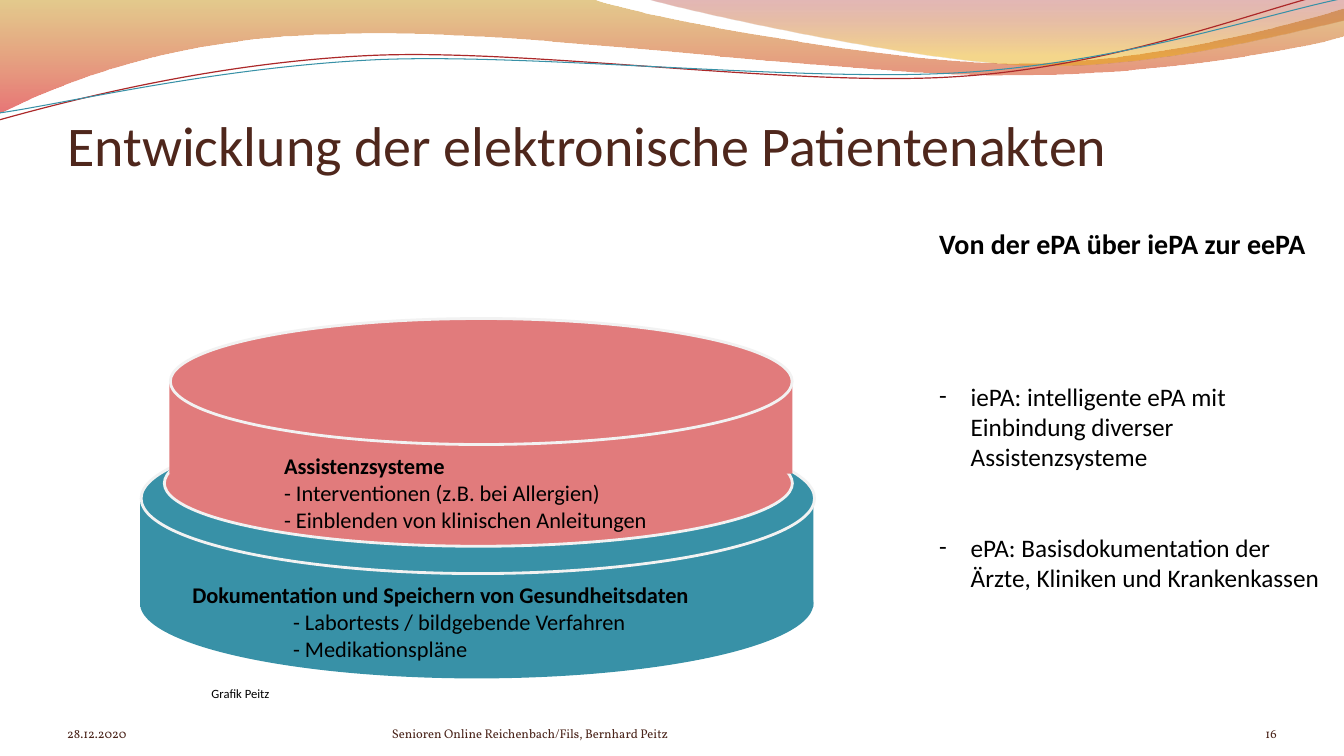
from dataclasses import dataclass
from typing import Optional

from lxml.etree import SubElement
from pptx import Presentation
from pptx.dml.color import RGBColor
from pptx.enum.shapes import MSO_SHAPE as Preset
from pptx.enum.text import MSO_ANCHOR as Anchor, MSO_AUTO_SIZE as AutoSize, PP_ALIGN as Align
from pptx.oxml.ns import qn
from pptx.util import Pt

Box = tuple[float, float, float, float]

TEAL, ROSE, RIM = "3891A7", "E17B7C", "F2F2F2"
BLACK, BROWN, FOOTER_BROWN = "000000", "4F271C", "4B251B"


@dataclass
class Stop:
    position: float
    color: str
    opacity: int


@dataclass
class Wave:
    start: tuple[float, float]
    segments: list[tuple[float, ...]]
    stops: tuple[Stop, ...] = ()
    line: str = ""
    line_width: float = 0


@dataclass
class Disc:
    color: str
    base: Box
    wall: Box
    lid: Box
    rimmed_base: bool


@dataclass
class Line:
    text: str
    size: float
    bold: bool = False
    font: str = "Calibri"
    color: str = BLACK
    before: float = 0
    indent: float = 0
    bullet: str = ""
    align: Align = Align.LEFT


@dataclass
class Label:
    box: Box
    lines: list[Line]
    anchor: Anchor = Anchor.TOP
    insets: Box = (7.2, 3.6, 7.2, 3.6)


WAVES = [
    Wave((0, 0), [
        (422.6, -0.7),
        (456.5, 12.2, 637.2, 45.4, 727.9, 45.4),
        (819.4, 45.4, 920.2, 18.7, 959.8, 6.5),
        (961.2, 25.9),
        (943.9, 31.7, 835.2, 54.7, 715.7, 54),
        (596.9, 54, 366.5, 20.2, 247, 24.5),
        (123.1, 25.9, 43.9, 59.8, -0.7, 81.4),
    ], stops=(Stop(0, "C38B00", 45), Stop(1, "D60305", 55))),
    Wave((460.1, -0.7), [
        (488.9, 7.9, 654.5, 44.6, 738, 46.8),
        (821.5, 49.7, 923, 23, 959.8, 15.1),
        (959.8, 0),
    ], stops=(Stop(0, "A11112", 30), Stop(0.8, "E9A600", 45))),
    Wave((-0.7, 85.7), [
        (46.1, 72.7, 151.9, 44.6, 265.7, 39.6),
        (379.4, 34.6, 568.8, 62.6, 684, 54.7),
        (799.2, 47.5, 901.4, 5.8, 958.3, -7.2),
    ], line="AC2829", line_width=0.85),
    Wave((0, 80.6), [
        (45.4, 74.2, 157, 47.5, 272.2, 42.5),
        (386.6, 38.2, 573.1, 59, 687.6, 51.8),
        (802.8, 44.6, 903.6, 10.1, 960.5, -1.4),
    ], line=TEAL, line_width=0.75),
]

DISCS = [
    Disc(TEAL, (100, 377.3, 481, 107.3), (100, 355.7, 481, 77.8), (100.8, 302.4, 481, 107.3), False),
    Disc(ROSE, (117.4, 300.2, 448.6, 90), (121, 272.9, 445, 65.5), (121.7, 227.5, 444.2, 90), True),
]


def footer(left: float, width: float, text: str, align: Align = Align.LEFT) -> Label:
    line = Line(text, 9, font="Vollkorn", color=FOOTER_BROWN, align=align)
    return Label((left, 500.4, width, 28.8), [line], Anchor.BOTTOM, (0, 0, 0, 0))


HEADING = Label((48, 55, 864, 72), [Line("Entwicklung der elektronische Patientenakten", 40, color=BROWN)],
                Anchor.BOTTOM, (0, 3.6, 0, 0))

LABELS = [
    footer(48, 224, "28.12.2020"),
    footer(280, 352, "Senioren Online Reichenbach/Fils, Bernhard Peitz"),
    footer(832, 80, "16", Align.RIGHT),
    Label((663.8, 158.6, 294, 271), [
        Line("Von der ePA über iePA zur eePA", 20, bold=True),
        Line("iePA: intelligente ePA mit\nEinbindung diverser\nAssistenzsysteme", 18,
             before=86, indent=22.5, bullet="-"),
        Line("ePA: Basisdokumentation der\nÄrzte, Kliniken und Krankenkassen", 18,
             before=43, indent=22.5, bullet="-"),
    ]),
    Label((130.3, 411.8, 385, 62.6), [
        Line("Dokumentation und Speichern von Gesundheitsdaten", 16, bold=True),
        Line("- Labortests / bildgebende Verfahren", 16, indent=72),
        Line("- Medikationspläne", 16, indent=72),
    ]),
    Label((195.8, 319.3, 290, 62.6), [
        Line("Assistenzsysteme", 16, bold=True),
        Line("- Interventionen (z.B. bei Allergien)", 16),
        Line("- Einblenden von klinischen Anleitungen", 16),
    ]),
    Label((144, 486.7, 64, 18), [Line("Grafik Peitz", 9)]),
]


def rgb(color: str) -> RGBColor:
    return RGBColor.from_string(color)


def bend_segments(ribbon, wave: Wave) -> None:
    steps = iter(list(ribbon._element.iter(qn("a:lnTo"))))
    for segment in wave.segments:
        curve = next(steps)
        if len(segment) == 2:
            continue
        curve.tag = qn("a:cubicBezTo")
        for _ in range(2):
            step = next(steps)
            curve.append(step[0])
            step.getparent().remove(step)


def draw_wave(shapes, wave: Wave) -> None:
    builder = shapes.build_freeform(*map(Pt, wave.start))
    points = [(Pt(x), Pt(y)) for segment in wave.segments for x, y in zip(segment[::2], segment[1::2])]
    builder.add_line_segments(points, close=bool(wave.stops))
    ribbon = builder.convert_to_shape()
    bend_segments(ribbon, wave)
    ribbon.shadow.inherit = False
    if not wave.stops:
        ribbon.fill.background()
        ribbon.line.color.rgb = rgb(wave.line)
        ribbon.line.width = Pt(wave.line_width)
        return
    ribbon.line.fill.background()
    ribbon.fill.gradient()
    ribbon.fill.gradient_angle = 270
    for target, stop in zip(ribbon.fill.gradient_stops, wave.stops):
        target.position = stop.position
        target.color.rgb = rgb(stop.color)
    colors = list(ribbon.fill._xPr.iter(qn("a:srgbClr")))
    for color, stop in zip(colors, wave.stops):
        SubElement(color, qn("a:alpha"), val=str(stop.opacity * 1000))


def draw_part(shapes, preset: Preset, box: Box, color: str, rim: Optional[str]) -> None:
    part = shapes.add_shape(preset, *map(Pt, box))
    part.shadow.inherit = False
    part.fill.solid()
    part.fill.fore_color.rgb = rgb(color)
    if rim:
        part.line.color.rgb = rgb(rim)
        part.line.width = Pt(2)
    else:
        part.line.fill.background()


def draw_disc(shapes, disc: Disc) -> None:
    draw_part(shapes, Preset.OVAL, disc.base, disc.color, RIM if disc.rimmed_base else None)
    draw_part(shapes, Preset.RECTANGLE, disc.wall, disc.color, None)
    draw_part(shapes, Preset.OVAL, disc.lid, disc.color, RIM)


def write_line(paragraph, line: Line) -> None:
    paragraph.alignment = line.align
    paragraph.space_before = Pt(line.before)
    properties = paragraph._p.get_or_add_pPr()
    properties.set("marL", str(Pt(line.indent)))
    properties.set("indent", str(Pt(-line.indent if line.bullet else 0)))
    if line.bullet:
        SubElement(properties, qn("a:buFont"), typeface=line.font)
        SubElement(properties, qn("a:buChar"), char=line.bullet)
    for index, text in enumerate(line.text.split("\n")):
        if index:
            paragraph.add_line_break()
        run = paragraph.add_run()
        run.text = text
        run.font.name, run.font.size, run.font.bold = line.font, Pt(line.size), line.bold
        run.font.color.rgb = rgb(line.color)


def fill_label(holder, label: Label) -> None:
    holder.left, holder.top, holder.width, holder.height = map(Pt, label.box)
    frame = holder.text_frame
    frame.word_wrap, frame.auto_size = True, AutoSize.NONE
    frame.vertical_anchor = label.anchor
    frame.margin_left, frame.margin_top, frame.margin_right, frame.margin_bottom = map(Pt, label.insets)
    for index, line in enumerate(label.lines):
        write_line(frame.add_paragraph() if index else frame.paragraphs[0], line)


def main() -> None:
    deck = Presentation()
    deck.slide_width, deck.slide_height = Pt(960), Pt(540)
    slide = deck.slides.add_slide(deck.slide_layouts[5])
    for wave in WAVES:
        draw_wave(slide.shapes, wave)
    fill_label(slide.shapes.title, HEADING)
    for disc in DISCS:
        draw_disc(slide.shapes, disc)
    for label in LABELS:
        fill_label(slide.shapes.add_textbox(*map(Pt, label.box)), label)
    deck.save("out.pptx")


if __name__ == "__main__":
    main()
